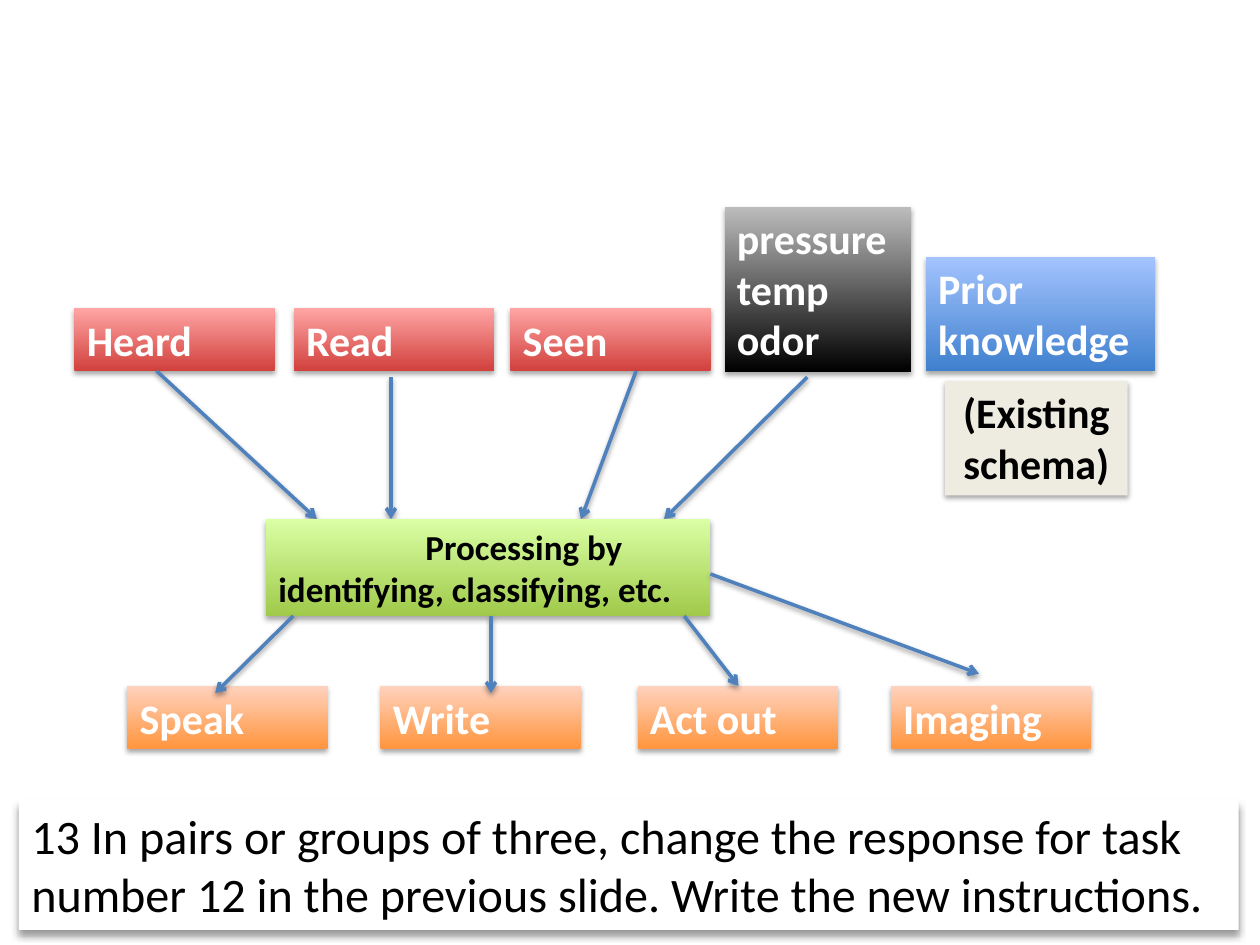
from lxml.etree import SubElement
from pptx import Presentation
from pptx.dml.color import RGBColor
from pptx.enum.shapes import MSO_CONNECTOR, MSO_SHAPE
from pptx.enum.text import MSO_ANCHOR, PP_ALIGN
from pptx.oxml.ns import qn
from pptx.util import Pt

HEX = {
    "white": "FFFFFF", "black": "000000", "cream": "EEECE1", "line": "4F81BD",
    "red": "D1403C", "pink": "FFA6A5", "blue": "3F80CE", "sky": "A4C4FF",
    "gray": "BDBDBD", "orange": "FF953E", "peach": "FFD2BD",
    "green": "A0CA4A", "lime": "DAFFA5",
}

# Content: boxes in a row share top and size
SENSES = [("Heard", 42.5), ("Read", 167.8), ("Seen", 291.6)]
OUTPUTS = [("Speak", 72.7), ("Write", 217.4), ("Act out", 364.3), ("Imaging", 509)]
TASK = ("13 In pairs or groups of three, change the response for task number 12 "
        "in the previous slide. Write the new instructions.")
WIDE, HIGH = 114.5, 36
BASE = 212          # bottom of the input boxes
MID, FOOT = 296.6, 352   # top and bottom of the processing box
OUT = 392           # top of the output boxes

# Arrows: x1, y1, x2, y2
INPUT_ARROWS = [(89.5, BASE, 181, MID), (223.4, 215.5, 223.4, MID),
                (363.5, BASE, 332, MID), (461.3, 215.5, 379.5, MID)]
OUTPUT_ARROWS = [(167.6, FOOT, 123, 396), (280.6, FOOT, 280.6, 396),
                 (391, FOOT, 422, OUT), (406, 328, 559.4, 385)]


def tint(name):
    return RGBColor.from_string(HEX[name])


def shade(shape, alpha, blur, dist):
    """Drop a black shadow straight down."""
    props = shape._element.spPr
    node = props.find(qn("a:effectLst"))
    if node is None:
        node = SubElement(props, qn("a:effectLst"))
    drop = SubElement(node, qn("a:outerShdw"), blurRad=str(Pt(blur)),
                      dist=str(Pt(dist)), dir="5400000", rotWithShape="0")
    color = SubElement(drop, qn("a:srgbClr"), val=HEX["black"])
    SubElement(color, qn("a:alpha"), val=str(alpha * 1000))


def add_box(lines, left, top, width, height, fills, ink="white", size=24,
            bold=True, align=PP_ALIGN.LEFT, shadow=(35, 3.1, 1.8)):
    """Fills holds one flat colour, or the bottom and top of a gradient."""
    box = slide.shapes.add_shape(MSO_SHAPE.RECTANGLE, Pt(left), Pt(top),
                                 Pt(width), Pt(height))
    if len(fills) == 1:
        box.fill.solid()
        box.fill.fore_color.rgb = tint(fills[0])
    else:
        box.fill.gradient()
        box.fill.gradient_angle = 90
        for stop, name, place in zip(box.fill.gradient_stops, fills, (0, 1)):
            stop.color.rgb = tint(name)
            stop.position = place
    box.line.fill.background()
    box.shadow.inherit = False
    shade(box, *shadow)
    frame = box.text_frame
    frame.word_wrap = True
    frame.vertical_anchor = MSO_ANCHOR.TOP
    frame.text = "\n".join(lines)
    for para in frame.paragraphs:
        para.alignment = align
        para.font.name = "Calibri"
        para.font.size = Pt(size)
        para.font.bold = bold
        para.font.color.rgb = tint(ink)
    return box


def add_arrow(x1, y1, x2, y2):
    arrow = slide.shapes.add_connector(MSO_CONNECTOR.STRAIGHT, Pt(x1), Pt(y1),
                                       Pt(x2), Pt(y2))
    arrow.line.color.rgb = tint("line")
    arrow.line.width = Pt(2)
    SubElement(arrow._element.spPr.find(qn("a:ln")), qn("a:tailEnd"), type="arrow")
    shade(arrow, 38, 3.1, 1.6)


deck = Presentation()
deck.slide_width, deck.slide_height = Pt(720), Pt(540)
slide = deck.slides.add_slide(deck.slide_layouts[6])

# Inputs
for word, left in SENSES:
    add_box([word], left, BASE - HIGH, WIDE, HIGH, ("red", "pink"))
add_box(["Prior", "knowledge"], 529, 146.7, 131, 65.5, ("blue", "sky"))
add_box(["pressure", "temp", "odor"], 414, 118, 106.5, 94.3, ("black", "gray"))
add_box(["(Existing schema)"], 540, 217.6, 104.4, 65.5, ("cream",), "black",
        align=PP_ALIGN.CENTER)
for ends in INPUT_ARROWS:
    add_arrow(*ends)

# Outputs and task
for word, left in OUTPUTS:
    add_box([word], left, OUT, WIDE, HIGH, ("orange", "peach"))
add_box([TASK], 10.8, 457.2, 697, 74.2, ("white",), "black", 27.5, False,
        shadow=(40, 4, 3))

# Processing, with an indented first line
core = add_box(["Processing by identifying, classifying, etc."], 152, MID, 254,
               FOOT - MID, ("green", "lime"), "black", 20)
core.text_frame.paragraphs[0]._p.get_or_add_pPr().set("indent", str(Pt(84)))
for ends in OUTPUT_ARROWS:
    add_arrow(*ends)

deck.save("out.pptx")
